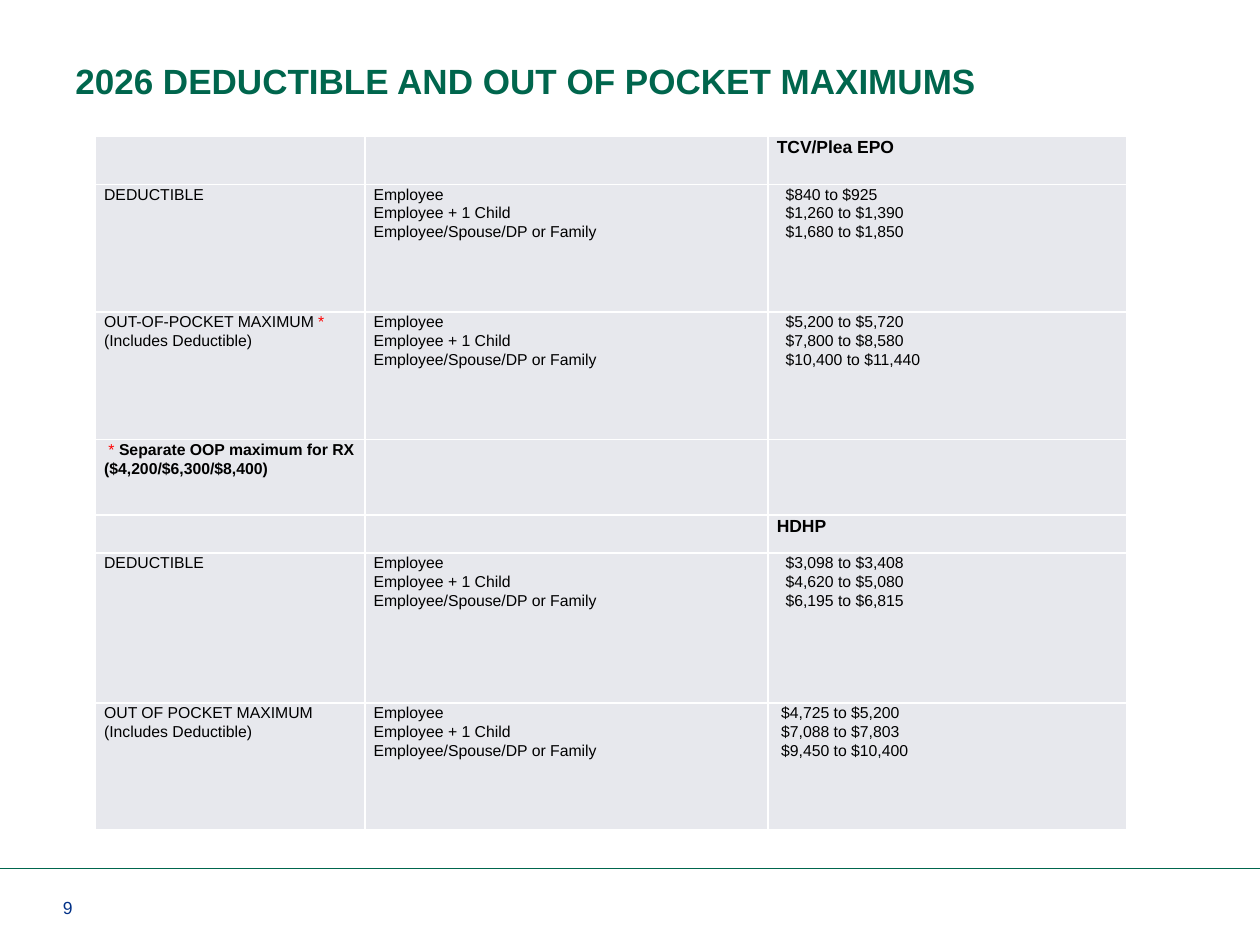
from lxml.etree import SubElement
from pptx import Presentation
from pptx.dml.color import RGBColor
from pptx.enum.shapes import MSO_CONNECTOR as Connector
from pptx.enum.text import MSO_ANCHOR as Anchor
from pptx.oxml.ns import qn
from pptx.util import Pt

# Content: a cell is a list of paragraphs, a paragraph a list of (text, style)
TITLE = "2026 DEDUCTIBLE AND OUT OF POCKET MAXIMUMS"
PAGE_NUMBER = "9"
GREEN, NAVY, BLACK, RED, WHITE, GREY = (
    "00664D", "003087", "000000", "FF0000", "FFFFFF", "E7E8ED")
STYLES = {
    "title": {"size": 20, "bold": True, "color": GREEN},
    "number": {"size": 10, "bold": False, "color": NAVY},
    "plan": {"size": 10, "bold": True, "color": BLACK},
    "body": {"size": 9, "bold": False, "color": BLACK},
    "note": {"size": 9, "bold": True, "color": BLACK},
    "star": {"size": 9, "bold": False, "color": RED},
}


def lines(*texts):
    return [[(text, "body")] for text in texts]


TIERS = lines("Employee", "Employee + 1 Child", "Employee/Spouse/DP or Family")
INCLUDES = [("(Includes Deductible)", "body")]
NOTE = [[("* ", "star"), ("Separate OOP maximum for RX ($4,200/$6,300/$8,400)", "note")]]
# Row height, its three cells, and the extra indent of the amounts
ROWS = [
    (27.5, [], [], [[("TCV/Plea EPO", "plan")]], 0),
    (72.9, lines("DEDUCTIBLE"), TIERS,
     lines("$840 to $925", "$1,260 to $1,390", "$1,680 to $1,850"), 5),
    (72.9, [[("OUT-OF-POCKET MAXIMUM ", "body"), ("*", "star")], INCLUDES], TIERS,
     lines("$5,200 to $5,720", "$7,800 to $8,580", "$10,400 to $11,440"), 5),
    (43.1, NOTE, [], [], 0),
    (21.7, [], [], [[("HDHP", "plan")]], 0),
    (85.7, lines("DEDUCTIBLE"), TIERS,
     lines("$3,098 to $3,408", "$4,620 to $5,080", "$6,195 to $6,815"), 5),
    (72.5, [[("OUT OF POCKET MAXIMUM", "body")], INCLUDES], TIERS,
     lines("$4,725 to $5,200", "$7,088 to $7,803", "$9,450 to $10,400"), 2.5),
]
COLUMN_WIDTHS = [154, 230.4, 205]
CELL_INSET = 5
NOTE_INDENT = 2.5


def rgb(value):
    return RGBColor.from_string(value)


def add_span(para, text, style):
    span = para.add_run()
    span.text = text
    span.font.name = "Arial"
    span.font.color.rgb = rgb(STYLES[style]["color"])
    span.font.size = Pt(STYLES[style]["size"])
    span.font.bold = STYLES[style]["bold"]


def add_label(page, place, text, style, format_values):
    frame = page.shapes.add_textbox(*map(Pt, place)).text_frame
    for name, value in format_values.items():
        setattr(frame, name, value)
    add_span(frame.paragraphs[0], text, style)


def set_borders(cell):
    properties = cell._tc.get_or_add_tcPr()
    for position, side in enumerate(("lnL", "lnR", "lnT", "lnB")):
        border = properties.makeelement(qn(f"a:{side}"), {"w": str(Pt(1))})
        fill = SubElement(border, qn("a:solidFill"))
        SubElement(fill, qn("a:srgbClr"), val=WHITE)
        properties.insert(position, border)


def fill_cell(cell, paragraphs, left_inset):
    cell.fill.solid()
    cell.fill.fore_color.rgb = rgb(GREY)
    set_borders(cell)
    margins = {"margin_left": left_inset, "margin_right": CELL_INSET,
               "margin_top": 0, "margin_bottom": 0}
    for name, value in margins.items():
        setattr(cell, name, Pt(value))
    frame = cell.text_frame
    for index, spans in enumerate(paragraphs):
        para = frame.add_paragraph() if index else frame.paragraphs[0]
        para.line_spacing = 1.07
        for text, style in spans:
            add_span(para, text, style)


deck = Presentation()
deck.slide_width, deck.slide_height = Pt(720), Pt(540)
page = deck.slides.add_slide(deck.slide_layouts[6])

# Footer rule and page number
rule = page.shapes.add_connector(Connector.STRAIGHT, Pt(0), Pt(496), Pt(720), Pt(496))
rule.line.color.rgb = rgb(GREEN)
rule.line.width = Pt(0.5)
SubElement(rule._element.spPr, qn("a:effectLst"))
add_label(page, (36, 510, 39, 18), PAGE_NUMBER, "number", {
    "word_wrap": True, "vertical_anchor": Anchor.BOTTOM,
    "margin_left": 0, "margin_right": 0})

# Title
add_label(page, (36, 28, 648, 28), TITLE, "title",
          {"word_wrap": True, "margin_top": Pt(5.8), "margin_bottom": 0})

# Table of limits
heights = [row[0] for row in ROWS]
table = page.shapes.add_table(
    len(ROWS), len(COLUMN_WIDTHS), Pt(54.5), Pt(78),
    Pt(sum(COLUMN_WIDTHS)), Pt(sum(heights))).table
for column, width in zip(table.columns, COLUMN_WIDTHS):
    column.width = Pt(width)
for row, (height, label, tiers, amounts, indent) in zip(table.rows, ROWS):
    row.height = Pt(height)
    insets = (CELL_INSET, CELL_INSET, CELL_INSET + indent)
    for cell, paragraphs, inset in zip(row.cells, (label, tiers, amounts), insets):
        fill_cell(cell, paragraphs, inset)
        if paragraphs is NOTE:
            first = cell.text_frame.paragraphs[0]
            first._p.get_or_add_pPr().set("indent", str(Pt(NOTE_INDENT)))

deck.save("out.pptx")
